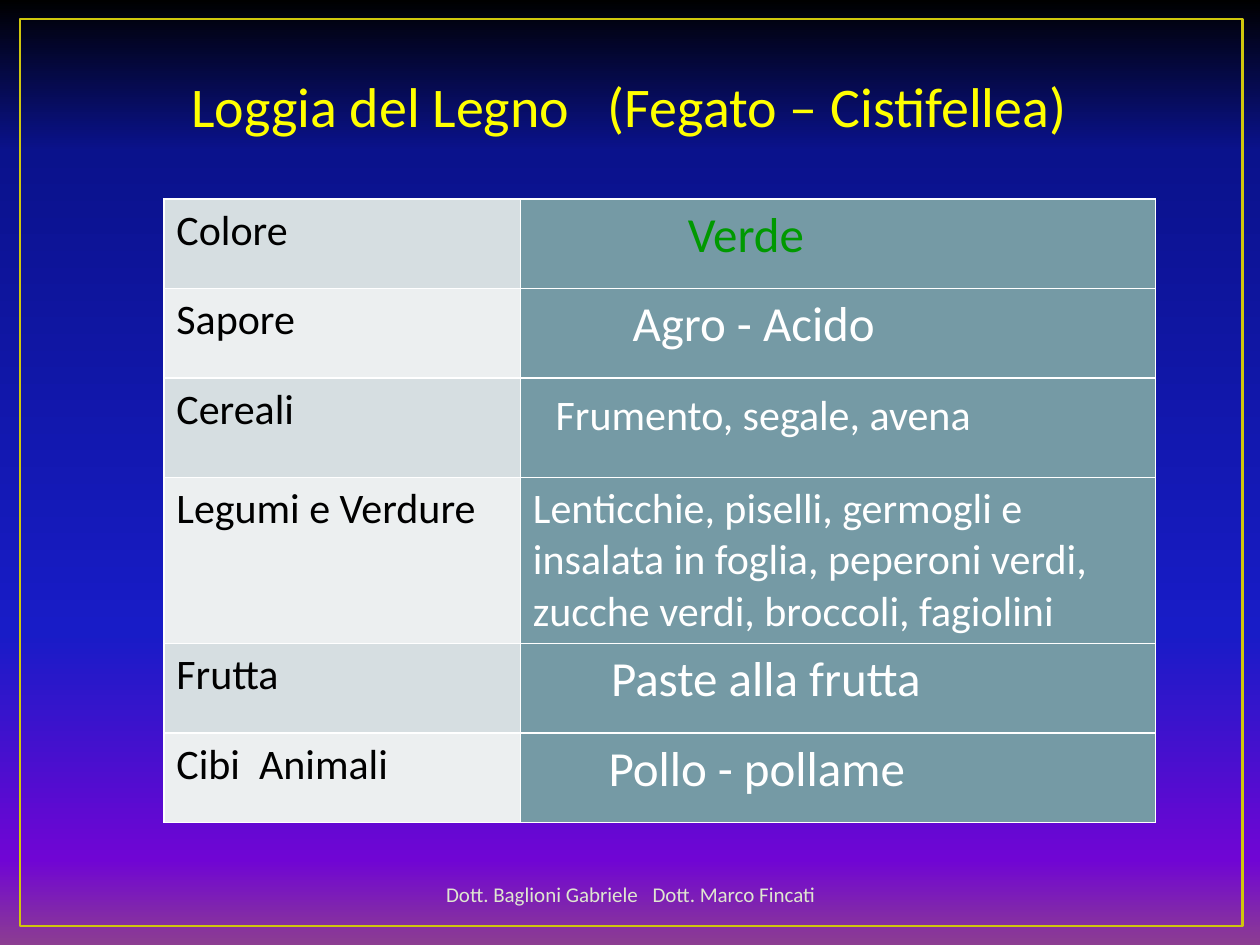
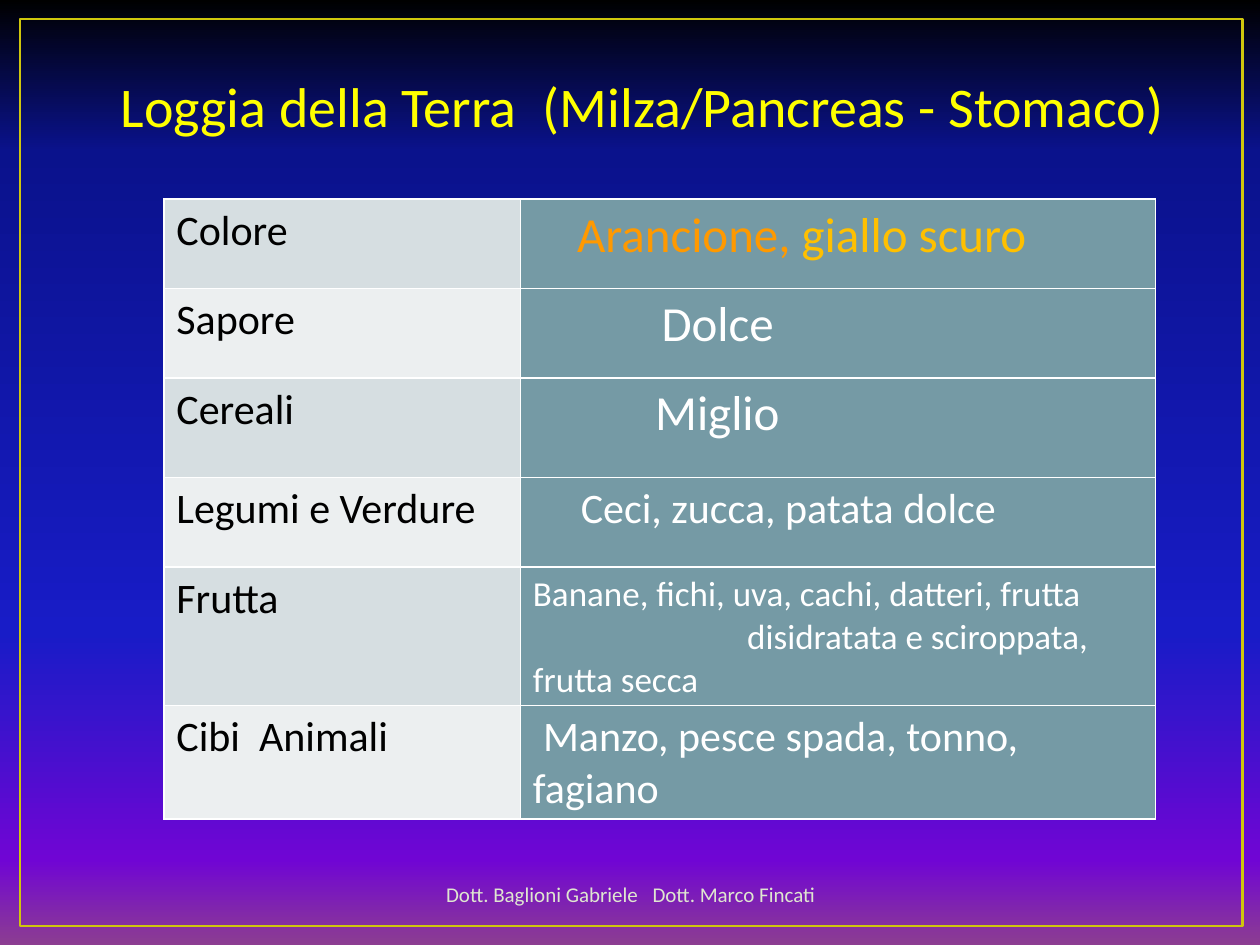
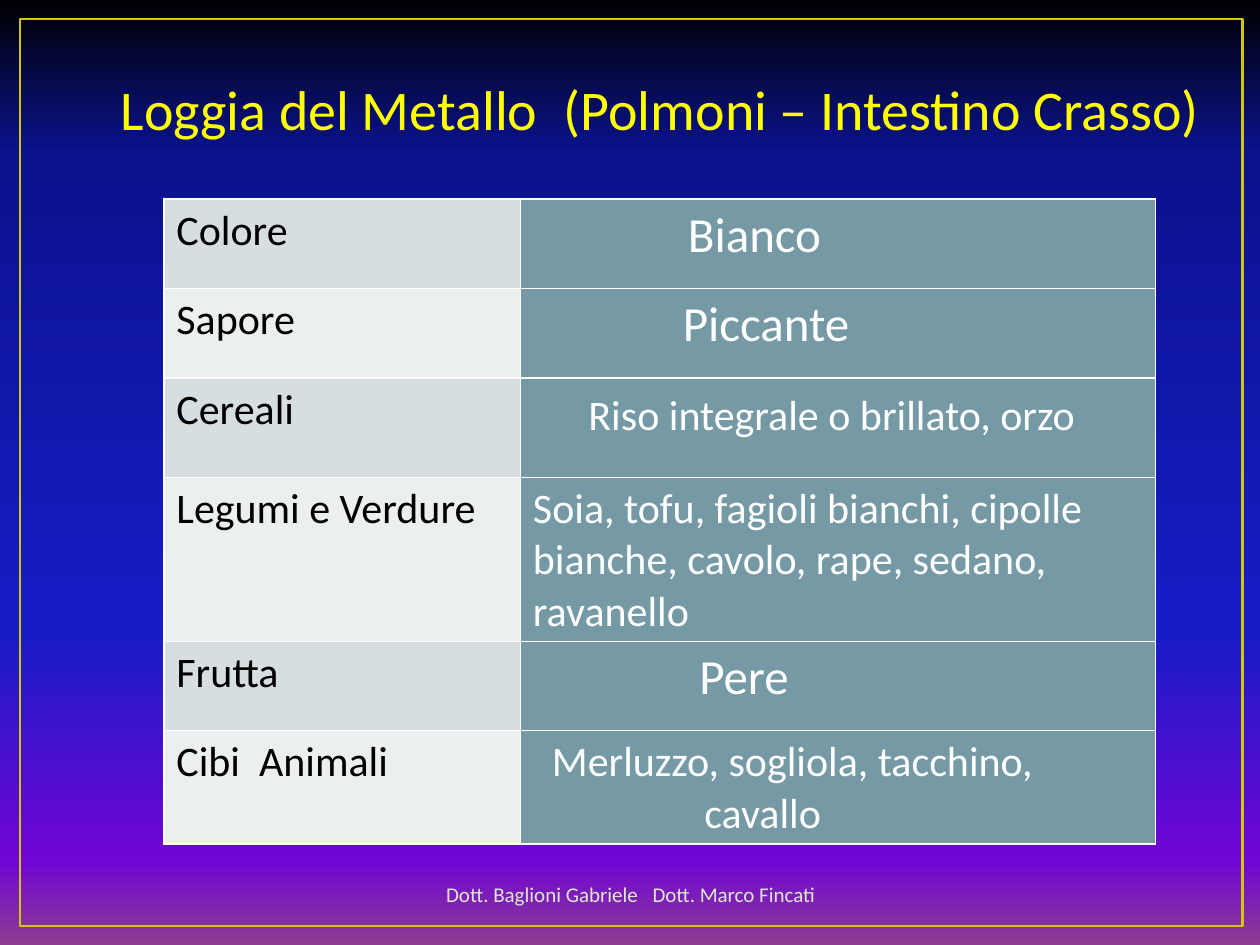
from dataclasses import dataclass
from itertools import product

from lxml.etree import SubElement
from pptx import Presentation
from pptx.dml.color import RGBColor
from pptx.enum.shapes import MSO_SHAPE
from pptx.enum.text import MSO_ANCHOR, PP_ALIGN
from pptx.oxml import parse_xml
from pptx.oxml.ns import nsdecls, qn
from pptx.util import Inches, Pt


@dataclass(frozen=True)
class Theme:
    font: str = "Calibri"
    space_width: float = 0.226
    title_size: int = 32
    large: int = 28
    medium: int = 24
    small: int = 20
    footer_size: int = 12
    title: str = "FFFF00"
    frame: str = "CFC60D"
    footer: str = "DFE6D0"
    label: str = "000000"
    value: str = "FFFFFF"
    border: str = "FFFFFF"
    value_fill: str = "759AA5"
    label_fills: tuple = ("D6DEE1", "ECEFF0")
    green: str = "009900"
    orange: str = "FF9900"
    amber: str = "FFC000"
    backdrop: tuple = ((0, "000000"), (16, "0A128C"), (67, "181CC7"),
                       (91, "7005D4"), (100, "8C3D91"))


THEME = Theme()
FOOTER = ("Dott. Baglioni Gabriele", 3, "Dott. Marco Fincati")
LABELS = [("Colore",), ("Sapore",), ("Cereali",), ("Legumi e Verdure",),
          ("Frutta",), ("Cibi", 2, "Animali")]
COLUMN_WIDTHS = (2.83, 5.04)
ROW_HEIGHTS = (0.71, 0.71, 0.79, 0.71, 0.71, 0.71)
CELL_TOP = 0.05


@dataclass(frozen=True)
class Entry:
    lines: tuple
    size: int = THEME.large
    drop: float = 0


def entry(indent, text, size=THEME.large, color=THEME.value, drop=0):
    return Entry(((indent, ((text, color),)),), size, drop)


def lines(size, *rows):
    return Entry(tuple((indent, ((text, THEME.value),)) for indent, text in rows), size)


PAGES = [
    {
        "title": ("Loggia del Legno", 3, "(Fegato – Cistifellea)"),
        "title_at": (1.42, 0.52, 7.75),
        "tall_rows": {3: 1.32},
        "entries": [
            entry(1.23, "Verde", color=THEME.green),
            entry(0.79, "Agro - Acido"),
            entry(0.18, "Frumento, segale, avena", THEME.medium, drop=0.05),
            entry(0, "Lenticchie, piselli, germogli e insalata in foglia, "
                     "peperoni verdi, zucche verdi, broccoli, fagiolini", THEME.medium),
            entry(0.62, "Paste alla frutta"),
            entry(0.6, "Pollo - pollame"),
        ],
    },
    {
        "title": ("Loggia della Terra", 2, "(Milza/Pancreas - Stomaco)"),
        "title_at": (0.86, 0.52, 8.9),
        "tall_rows": {4: 1.1, 5: 0.9},
        "entries": [
            Entry(((0.35, (("Arancione,", THEME.orange), (" giallo scuro", THEME.amber))),)),
            entry(1.02, "Dolce"),
            entry(0.97, "Miglio"),
            entry(0.38, "Ceci, zucca, patata dolce", THEME.medium),
            lines(THEME.small, (0, "Banane, fichi, uva, cachi, datteri, frutta"),
                  (1.7, "disidratata e sciroppata,"), (0, "frutta secca")),
            lines(THEME.medium, (0.08, "Manzo, pesce spada, tonno,"), (0, "fagiano")),
        ],
    },
    {
        "title": ("Loggia del Metallo", 2, "(Polmoni – Intestino Crasso)"),
        "title_at": (0.86, 0.54, 8.87),
        "tall_rows": {3: 1.3, 5: 0.9},
        "entries": [
            entry(1.23, "Bianco"),
            entry(1.19, "Piccante"),
            entry(0.44, "Riso integrale o brillato, orzo", THEME.medium, drop=0.05),
            entry(0, "Soia, tofu, fagioli bianchi, cipolle bianche, cavolo, rape, "
                     "sedano, ravanello", THEME.medium),
            entry(1.32, "Pere"),
            lines(THEME.medium, (0.15, "Merluzzo, sogliola, tacchino,"), (1.36, "cavallo")),
        ],
    },
]


def set_font(paragraph, size, color=None):
    paragraph.font.name = THEME.font
    paragraph.font.size = Pt(size)
    paragraph.font.bold = False
    if color:
        paragraph.font.color.rgb = RGBColor.from_string(color)


def write_spaced(paragraph, parts, size, color):
    set_font(paragraph, size, color)
    for part in parts:
        span = paragraph.add_run()
        if isinstance(part, int):
            span.text = " "
            spacing = round((part - 1) * THEME.space_width * size * 100)
            span.font._element.set("spc", str(spacing))
        else:
            span.text = part


def write_entry(cell, content):
    frame = cell.text_frame
    cell.margin_top = Inches(CELL_TOP + content.drop)
    for index, (indent, spans) in enumerate(content.lines):
        paragraph = frame.add_paragraph() if index else frame.paragraphs[0]
        properties = paragraph._p.get_or_add_pPr()
        properties.set("marL", "0")
        properties.set("indent", str(Inches(indent)))
        set_font(paragraph, content.size)
        for text, color in spans:
            span = paragraph.add_run()
            span.text = text
            span.font.color.rgb = RGBColor.from_string(color)


def paint_cell(cell, color):
    cell.fill.solid()
    cell.fill.fore_color.rgb = RGBColor.from_string(color)
    properties = cell._tc.get_or_add_tcPr()
    for index, side in enumerate(("lnL", "lnR", "lnT", "lnB")):
        properties.insert(index, parse_xml(
            f'<a:{side} {nsdecls("a")} w="{Pt(1)}"><a:solidFill>'
            f'<a:srgbClr val="{THEME.border}"/></a:solidFill></a:{side}>'))


def paint_backdrop(master):
    fill = master.background.fill
    fill.gradient()
    fill.gradient_angle = 270
    stops = master.element.find(f".//{qn('p:bgPr')}//{qn('a:gsLst')}")
    for stop in list(stops):
        stops.remove(stop)
    for position, color in THEME.backdrop:
        stop = SubElement(stops, qn("a:gs"), pos=str(position * 1000))
        SubElement(stop, qn("a:srgbClr"), val=color)


def add_text(page, place, parts, size, color):
    box = page.shapes.add_textbox(*map(Inches, place))
    box.text_frame.word_wrap = True
    write_spaced(box.text_frame.paragraphs[0], parts, size, color)
    return box.text_frame


def add_frame_and_footer(page):
    frame = page.shapes.add_shape(MSO_SHAPE.RECTANGLE, *map(Inches, (0.16, 0.15, 9.7, 7.2)))
    frame.shadow.inherit = False
    frame.fill.background()
    frame.line.color.rgb = RGBColor.from_string(THEME.frame)
    frame.line.width = Pt(1.5)
    footer = add_text(page, (3.1, 6.9, 3.81, 0.4), FOOTER, THEME.footer_size, THEME.footer)
    footer.vertical_anchor = MSO_ANCHOR.MIDDLE
    footer.paragraphs[0].alignment = PP_ALIGN.CENTER


def add_food_table(page, entries, tall_rows):
    heights = [tall_rows.get(row, height) for row, height in enumerate(ROW_HEIGHTS)]
    place = (1.3, 1.58, sum(COLUMN_WIDTHS), sum(heights))
    table = page.shapes.add_table(len(LABELS), 2, *map(Inches, place)).table
    table.first_row = table.horz_banding = False
    for column, width in zip(table.columns, COLUMN_WIDTHS):
        column.width = Inches(width)
    for row, height in zip(table.rows, heights):
        row.height = Inches(height)
    for row, column in product(range(len(LABELS)), range(2)):
        cell = table.cell(row, column)
        if column:
            paint_cell(cell, THEME.value_fill)
            write_entry(cell, entries[row])
        else:
            paint_cell(cell, THEME.label_fills[row % 2])
            write_spaced(cell.text_frame.paragraphs[0], LABELS[row], THEME.medium, THEME.label)


def main():
    deck = Presentation()
    deck.slide_width, deck.slide_height = Inches(10), Inches(7.5)
    paint_backdrop(deck.slide_master)
    for content in PAGES:
        page = deck.slides.add_slide(deck.slide_layouts[6])
        add_frame_and_footer(page)
        add_food_table(page, content["entries"], content["tall_rows"])
        add_text(page, (*content["title_at"], 0.64), content["title"],
                 THEME.title_size, THEME.title)
    deck.save("out.pptx")


if __name__ == "__main__":
    main()
